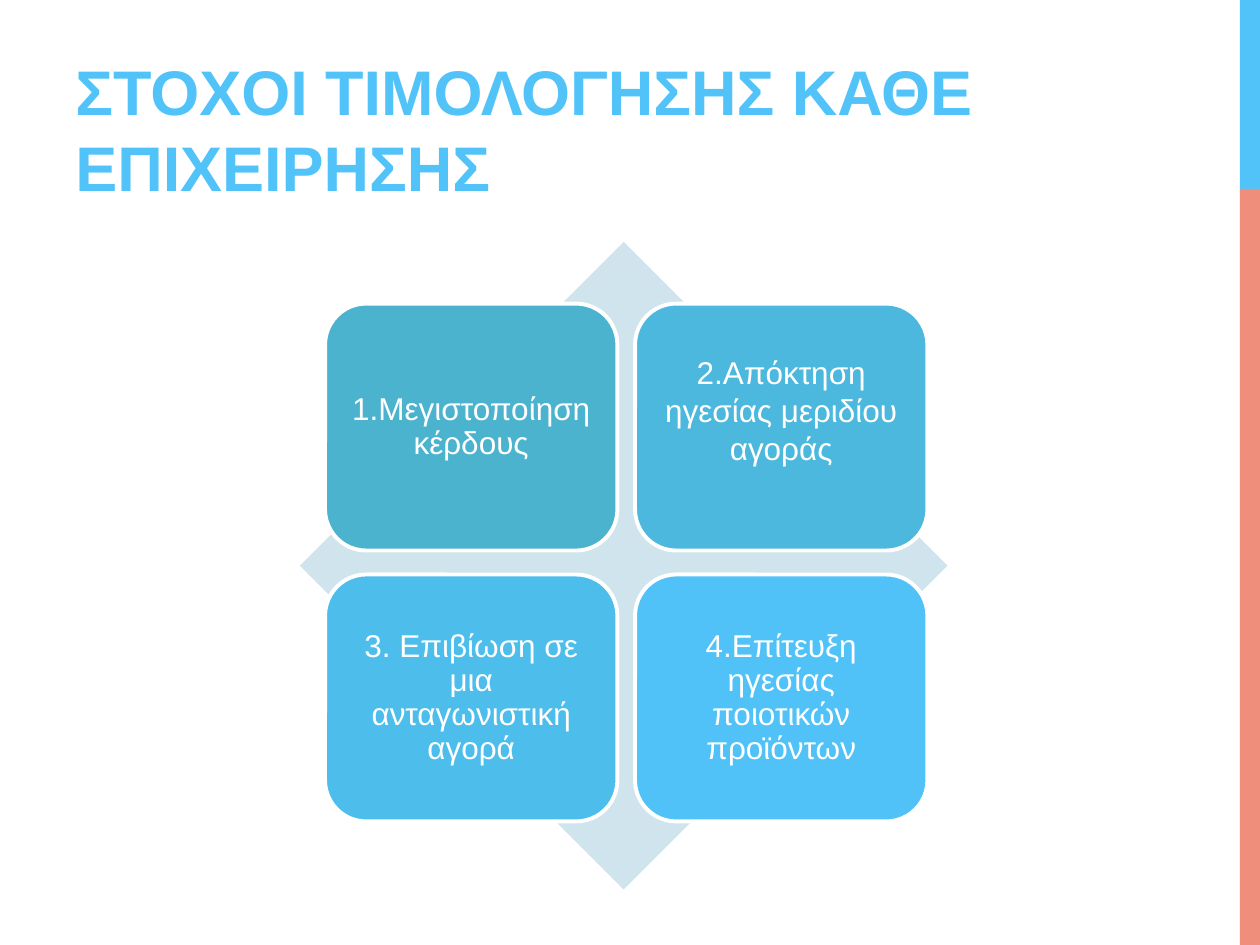
"""Build the slide on the four pricing goals of a business."""
from pptx import Presentation
from pptx.dml.color import RGBColor
from pptx.enum.shapes import MSO_SHAPE as Shape
from pptx.enum.text import MSO_ANCHOR as Anchor, PP_ALIGN as Align
from pptx.util import Inches, Pt

WHITE = RGBColor(0xFF, 0xFF, 0xFF)
SKY = RGBColor(0x51, 0xC3, 0xF9)
CORAL = RGBColor(0xEF, 0x8E, 0x7B)
PALE = RGBColor(0xCF, 0xE4, 0xED)
FONT = "Arial"

TITLE = "ΣΤΟΧΟΙ ΤΙΜΟΛΟΓΗΣΗΣ ΚΑΘΕ ΕΠΙΧΕΙΡΗΣΗΣ"
GOALS = [
    ("1.Μεγιστοποίηση κέρδους", RGBColor(0x4C, 0xB3, 0xCE), 0.9, 0.08),
    ("2.Απόκτηση ηγεσίας μεριδίου αγοράς", RGBColor(0x4C, 0xB8, 0xDD), 1.0, 0.35),
    ("3. Επιβίωση σε μια ανταγωνιστική αγορά", RGBColor(0x4D, 0xBE, 0xEB), 0.9, 0.08),
    ("4.Επίτευξη ηγεσίας ποιοτικών προϊόντων", RGBColor(0x50, 0xC2, 0xF7), 0.9, 0.08),
]
GRID_LEFT, GRID_TOP = 2.58, 2.41
CARD_WIDTH, CARD_HEIGHT = 2.32, 1.96
STEP_X, STEP_Y = 2.46, 2.15
INSET = 0.08


def add_filled(slide, kind, box, color):
    shape = slide.shapes.add_shape(kind, *map(Inches, box))
    shape.shadow.inherit = False
    shape.fill.solid()
    shape.fill.fore_color.rgb = color
    shape.line.fill.background()
    return shape


def set_text(shape, text, size, color, bold=False):
    frame = shape.text_frame
    frame.word_wrap = True
    paragraph = frame.paragraphs[0]
    paragraph.text = text
    font = paragraph.font
    font.name, font.size, font.bold = FONT, Pt(size), bold
    font.color.rgb = color
    return frame, paragraph


def add_goal(slide, index, text, color, spacing, bottom):
    row, column = divmod(index, 2)
    box = (GRID_LEFT + column * STEP_X, GRID_TOP + row * STEP_Y, CARD_WIDTH, CARD_HEIGHT)
    card = add_filled(slide, Shape.ROUNDED_RECTANGLE, box, color)
    card.line.color.rgb = WHITE
    card.line.width = Pt(2.25)
    frame, paragraph = set_text(card, text, 18, WHITE)
    frame.vertical_anchor = Anchor.MIDDLE
    frame.margin_left = frame.margin_right = frame.margin_top = Inches(INSET)
    frame.margin_bottom = Inches(bottom)
    paragraph.alignment = Align.CENTER
    paragraph.line_spacing = spacing


def main():
    presentation = Presentation()
    presentation.slide_width, presentation.slide_height = Inches(10), Inches(7.5)
    slide = presentation.slides.add_slide(presentation.slide_layouts[6])

    add_filled(slide, Shape.RECTANGLE, (9.84, 0, 0.16, 1.5), SKY)
    add_filled(slide, Shape.RECTANGLE, (9.84, 1.5, 0.16, 6), CORAL)

    title = slide.shapes.add_textbox(Inches(0.5), Inches(0.17), Inches(7.33), Inches(1.5))
    frame, _ = set_text(title, TITLE, 36, SKY, bold=True)
    frame.vertical_anchor = Anchor.BOTTOM

    add_filled(slide, Shape.DIAMOND, (2.38, 1.92, 5.14, 5.14), PALE)
    for index, goal in enumerate(GOALS):
        add_goal(slide, index, *goal)

    presentation.save("out.pptx")


if __name__ == "__main__":
    main()
